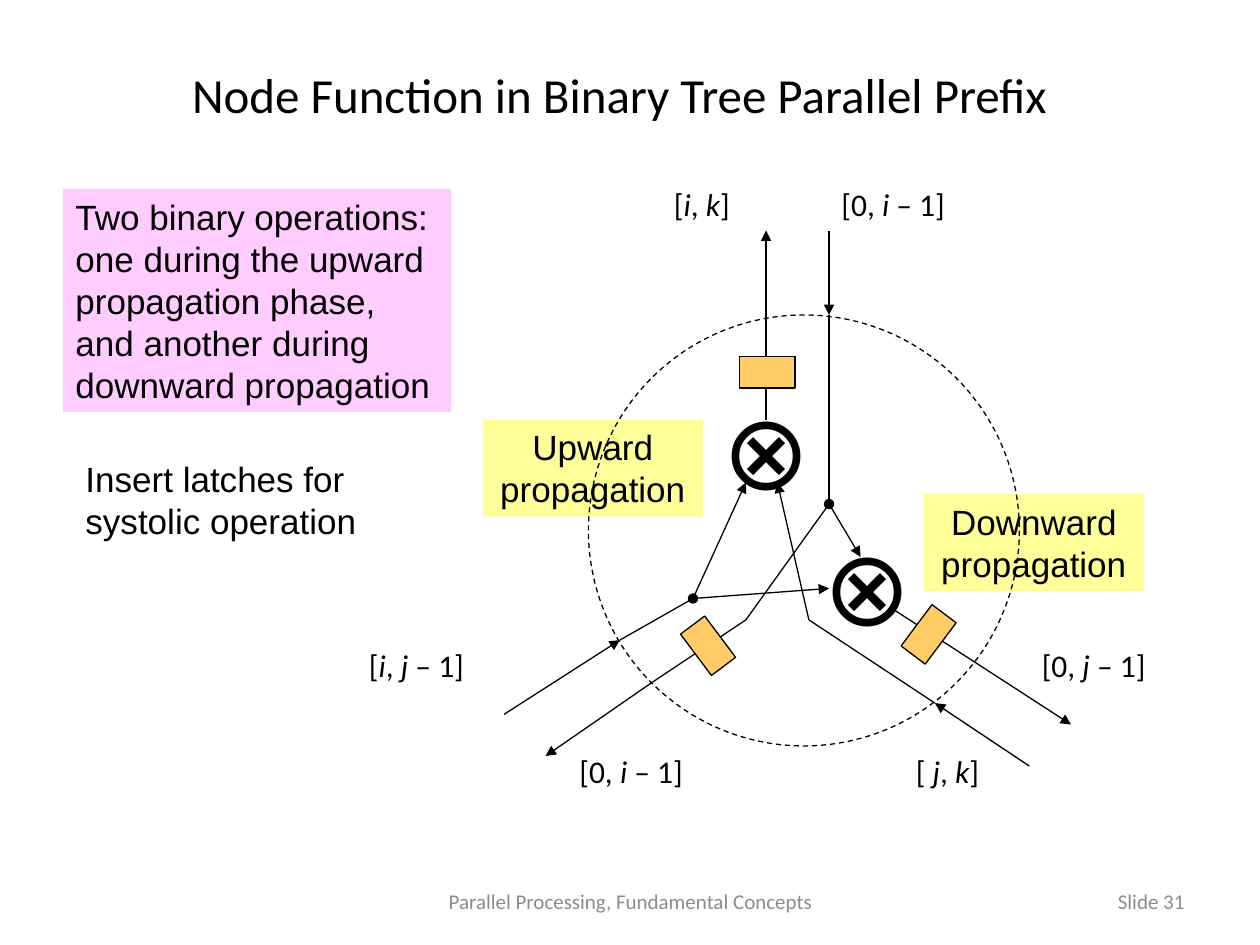
import itertools

import lxml.etree
import pptx
import pptx.dml.color
import pptx.enum.dml
import pptx.enum.shapes
import pptx.enum.text
import pptx.oxml.ns
import pptx.util

Inches = pptx.util.Inches
Align = pptx.enum.text.PP_ALIGN
Anchor = pptx.enum.text.MSO_ANCHOR
Shape = pptx.enum.shapes.MSO_SHAPE

BLACK, GREY = "000000", "8C8C8C"
PINK, YELLOW, ORANGE = "FFCCFF", "FFFF99", "FFCC66"


def color(hex_string):
    return pptx.dml.color.RGBColor.from_string(hex_string)


def style_paragraph(paragraph, size, font, align=Align.LEFT, ink=BLACK):
    paragraph.alignment = align
    paragraph.font.size = pptx.util.Pt(size)
    paragraph.font.name = font
    paragraph.font.color.rgb = color(ink)


def add_text(slide, box, lines, size, font, align=Align.LEFT, ink=BLACK,
             fill=None, anchor=Anchor.TOP):
    shape = slide.shapes.add_textbox(*map(Inches, box))
    if fill:
        shape.fill.solid()
        shape.fill.fore_color.rgb = color(fill)
    frame = shape.text_frame
    frame.word_wrap = True
    frame.vertical_anchor = anchor
    frame.text = "\n".join(lines)
    for paragraph in frame.paragraphs:
        style_paragraph(paragraph, size, font, align, ink)


def add_range_label(slide, left, top, label):
    shape = slide.shapes.add_textbox(Inches(left), Inches(top), Inches(1.35), Inches(0.5))
    shape.text_frame.word_wrap = True
    paragraph = shape.text_frame.paragraphs[0]
    style_paragraph(paragraph, 18, "Calibri")
    for is_index, letters in itertools.groupby(label, lambda letter: letter in "ijk"):
        run = paragraph.add_run()
        run.text = "".join(letters)
        run.font.italic = is_index


def add_outlined(slide, kind, box, fill=None, rotation=0):
    shape = slide.shapes.add_shape(kind, *map(Inches, box))
    shape.shadow.inherit = False
    shape.rotation = rotation
    shape.line.color.rgb = color(BLACK)
    shape.line.width = pptx.util.Pt(0.75)
    if fill:
        shape.fill.solid()
        shape.fill.fore_color.rgb = color(fill)
    else:
        shape.fill.background()
    return shape


def add_wire(slide, start, end, head=None, tail=None):
    wire = slide.shapes.add_connector(
        pptx.enum.shapes.MSO_CONNECTOR.STRAIGHT, *map(Inches, start + end))
    wire.line.color.rgb = color(BLACK)
    wire.line.width = pptx.util.Pt(0.75)
    line = wire.line._get_or_add_ln()
    for tag, kind in (("a:headEnd", head), ("a:tailEnd", tail)):
        if kind:
            lxml.etree.SubElement(line, pptx.oxml.ns.qn(tag)).set("type", kind)
    lxml.etree.SubElement(wire._element.spPr, pptx.oxml.ns.qn("a:effectLst"))


def place_title(slide, box, text):
    title = slide.shapes.title
    title.left, title.top, title.width, title.height = map(Inches, box)
    title.text_frame.text = text
    title.text_frame.vertical_anchor = Anchor.MIDDLE
    style_paragraph(title.text_frame.paragraphs[0], 28, "Calibri", Align.CENTER)


def place_notes(slide, left, top):
    add_text(slide, (left, top, 3.08, 1.77),
             ["Two binary operations: one during the upward propagation phase, "
              "and another during downward propagation"], 20, "Arial", fill=PINK)
    add_text(slide, (left + 0.08, top + 2.08, 2.58, 0.77),
             ["Insert latches for systolic operation"], 20, "Arial")


def place_node_diagram(slide, left, top):
    def at(x, y, *size):
        return (left + x, top + y) + size

    for x, y, direction in ((1.83, 2.33, "Upward"), (5.33, 2.92, "Downward")):
        add_text(slide, at(x, y, 1.75, 0.77), [direction, "propagation"],
                 20, "Arial", Align.CENTER, fill=YELLOW)

    boundary = add_outlined(slide, Shape.OVAL, at(2.67, 1.5, 3.42, 3.42))
    boundary.line.dash_style = pptx.enum.dml.MSO_LINE.DASH

    left_gate, left_joint = at(2.92, 4.08), at(3.5, 3.75)
    left_exit, left_bend = at(3.17, 4.42), at(3.92, 3.92)
    right_gate, right_bend = at(5.42, 4.58), at(4.42, 3.92)
    top_gate, top_joint = at(4.58, 1.5), at(4.58, 3)
    wires = [
        (at(2, 4.67), left_gate, None, "triangle"),
        (left_gate, left_joint, None, None),
        (left_joint, at(3.92, 2.83), None, "triangle"),
        (left_joint, at(4.58, 3.67), "oval", "triangle"),
        (at(6.17, 5.08), right_gate, None, "triangle"),
        (right_gate, right_bend, None, None),
        (right_bend, at(4.17, 2.83), None, "triangle"),
        (at(4.58, 0.83), top_gate, None, "triangle"),
        (top_gate, top_joint, None, None),
        (top_joint, at(4.83, 3.42), "oval", "triangle"),
        (top_joint, left_bend, None, None),
        (left_bend, left_exit, None, None),
        (left_exit, at(2.33, 5), None, "triangle"),
        (at(5.08, 3.83), at(6.5, 4.75), None, "triangle"),
        (at(4.08, 2.33), at(4.08, 0.83), None, "triangle"),
    ]
    for start, end, head, tail in wires:
        add_wire(slide, start, end, head, tail)

    for x, y, width in ((3.58, 2, 1), (4.42, 3.08, 0.93)):
        add_text(slide, at(x, y, width, 1.1), ["⊗"], 60, "Calibri", Align.CENTER)

    for x, y, label in ((3.25, 0.42, "[i, k]"), (4.58, 0.42, "[0, i – 1]"),
                        (0.83, 4.08, "[i, j – 1]"), (6.17, 4.08, "[0, j – 1]"),
                        (2.5, 4.92, "[0, i – 1]"), (5.17, 4.92, "[ j, k]")):
        add_range_label(slide, *at(x, y), label)

    for x, y, width, height, rotation in ((3.5, 3.92, 0.24, 0.41, -36.8),
                                          (5.25, 3.83, 0.24, 0.41, 36.8),
                                          (3.87, 1.83, 0.44, 0.25, 0)):
        add_outlined(slide, Shape.RECTANGLE, at(x, y, width, height), ORANGE, rotation)


def place_footer(slide, top):
    for left, width, text, align in (
            (3.42, 3.17, "Parallel Processing, Fundamental Concepts", Align.CENTER),
            (7.17, 2.33, "Slide 31", Align.RIGHT)):
        add_text(slide, (left, top, width, 0.4), [text], 12, "Calibri",
                 align, GREY, anchor=Anchor.MIDDLE)


def main():
    presentation = pptx.Presentation()
    presentation.slide_width = Inches(10)
    presentation.slide_height = Inches(7.5)
    slide = presentation.slides.add_slide(presentation.slide_layouts.get_by_name("Title Only"))
    place_title(slide, (0.25, 0.33, 9.33, 0.83),
                "Node Function in Binary Tree Parallel Prefix")
    place_notes(slide, 0.5, 1.5)
    place_node_diagram(slide, 2, 1)
    place_footer(slide, 6.95)
    presentation.save("out.pptx")


if __name__ == "__main__":
    main()
